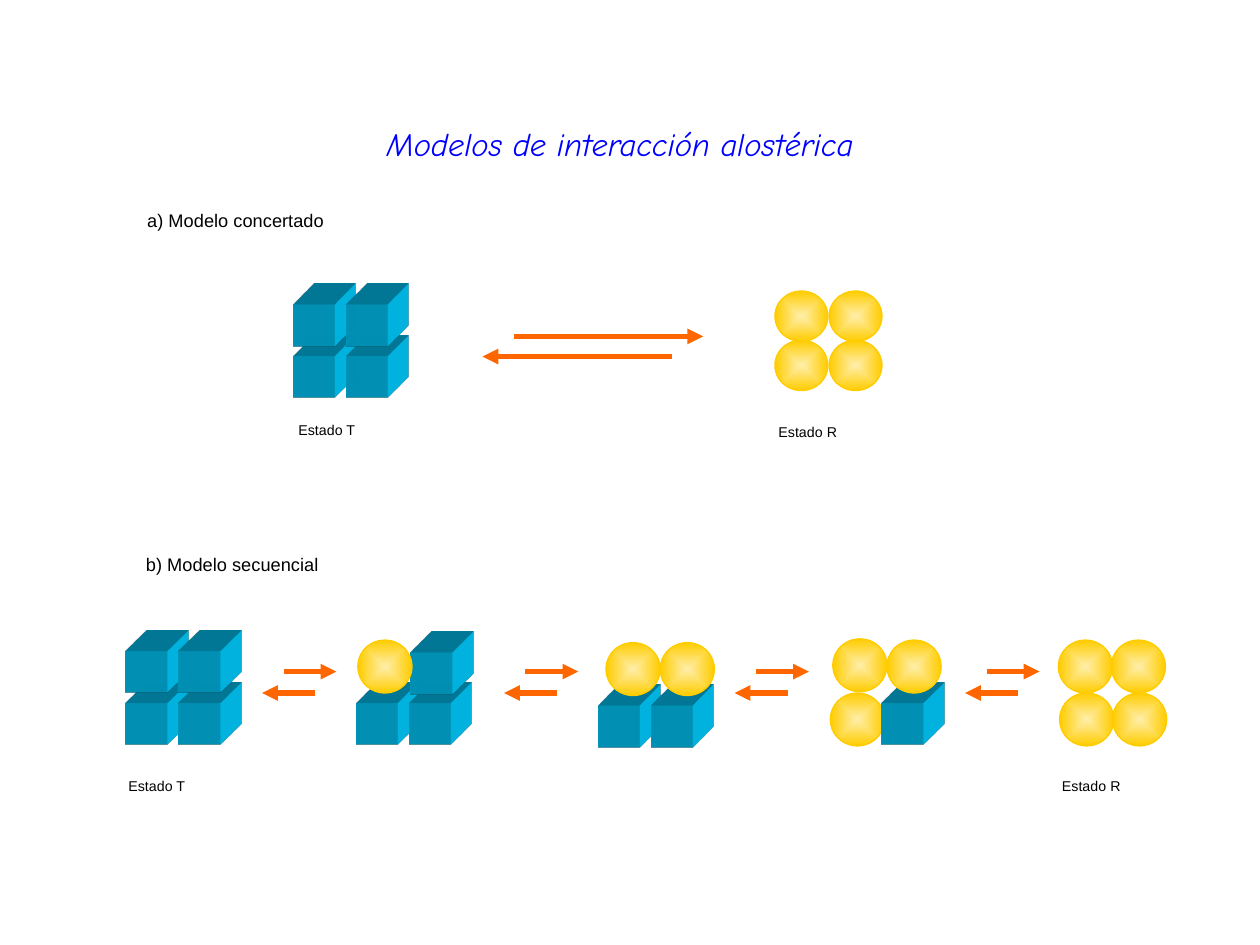
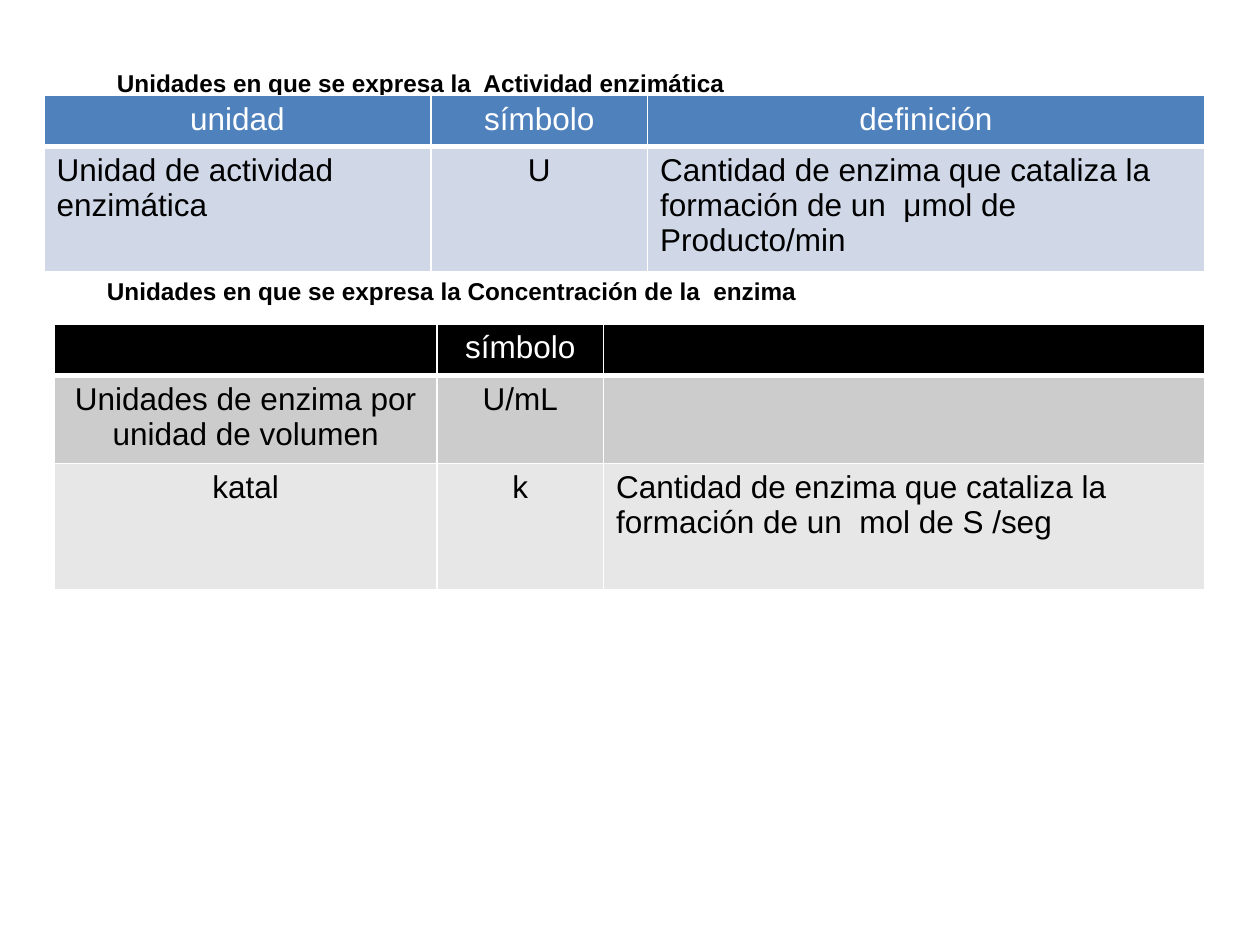
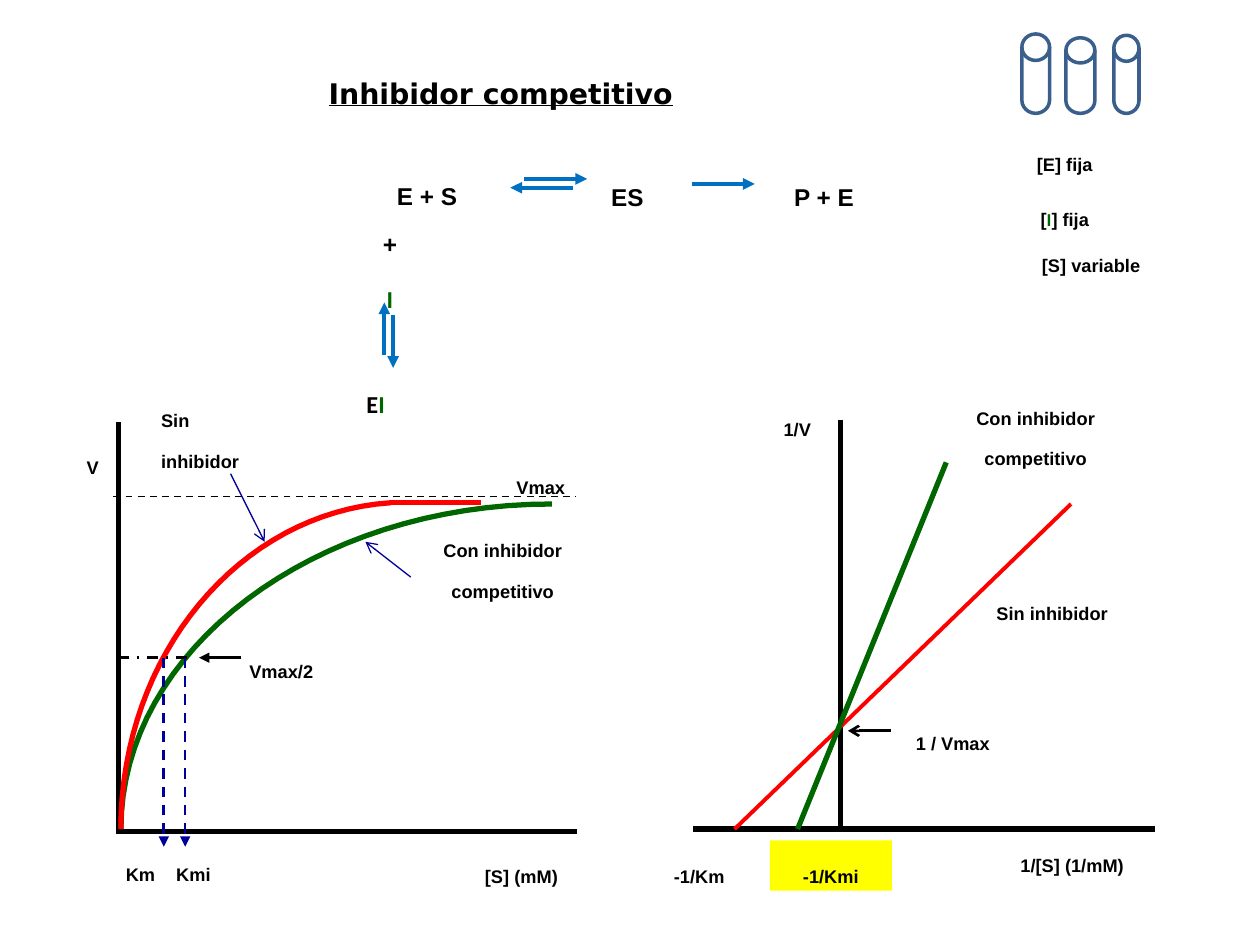
from pptx import Presentation
from pptx.dml.color import RGBColor
from pptx.enum.dml import MSO_LINE
from pptx.enum.shapes import MSO_CONNECTOR, MSO_SHAPE
from pptx.enum.text import MSO_ANCHOR, PP_ALIGN
from pptx.oxml import parse_xml
from pptx.oxml.ns import nsdecls, qn
from pptx.util import Inches, Pt

CENTER, LEFT, TOP = PP_ALIGN.CENTER, PP_ALIGN.LEFT, MSO_ANCHOR.TOP
DASH, DASH_DOT = MSO_LINE.DASH, MSO_LINE.DASH_DOT
STRAIGHT = MSO_CONNECTOR.STRAIGHT
RECT, OVAL = MSO_SHAPE.RECTANGLE, MSO_SHAPE.OVAL
TUBE = MSO_SHAPE.FLOWCHART_MAGNETIC_DISK

COLORS = {
    "black": "000000", "white": "FFFFFF", "title": "0000FF",
    "cube": "00CCFF", "sphere": "FFCC00", "glow": "FFEEA9", "exchange": "FF6600",
    "header": "4F81BD", "band": "D0D8E8", "gray": "CCCCCC", "light gray": "E7E7E7",
    "reaction": "0070C0", "inhibited": "006600", "free": "FF0000",
    "guide": "000099", "highlight": "FFFF00", "tube": "3A5F8C",
}
LOWERED = -18000  # baseline shift shared by all text outside tables


def rgb(name):
    return RGBColor.from_string(COLORS[name])


def write(frame, text, align=LEFT, **style):
    """Fill a frame; text is a string or a list of paragraphs, each a string or runs."""
    frame.word_wrap = True
    for index, content in enumerate([text] if isinstance(text, str) else text):
        paragraph = frame.paragraphs[0] if index == 0 else frame.add_paragraph()
        paragraph.alignment = align
        for words, changes in [(content, {})] if isinstance(content, str) else content:
            look = {"size": 18, "font": "Arial", "color": "black", "bold": False,
                    "italic": False, "underline": False, "baseline": LOWERED,
                    **style, **changes}
            run = paragraph.add_run()
            run.text = words
            font = run.font
            font.size, font.name = Pt(look["size"]), look["font"]
            font.bold, font.italic = look["bold"], look["italic"]
            font.underline = look["underline"]
            font.color.rgb = rgb(look["color"])
            if look["baseline"]:
                run._r.get_or_add_rPr().set("baseline", str(look["baseline"]))


class Deck:
    def __init__(self):
        self.presentation = Presentation()
        self.presentation.slide_width = Inches(10)
        self.presentation.slide_height = Inches(7.5)
        self.slide = None

    def new_slide(self):
        self.slide = self.presentation.slides.add_slide(self.presentation.slide_layouts[6])

    def text(self, x, y, width, height, text, **style):
        box = self.slide.shapes.add_textbox(*map(Inches, (x, y, width, height)))
        write(box.text_frame, text, **style)

    def shape(self, kind, x, y, width, height, fill, line=None, weight=0.75):
        shape = self.slide.shapes.add_shape(kind, *map(Inches, (x, y, width, height)))
        shape.shadow.inherit = False
        shape.fill.solid()
        shape.fill.fore_color.rgb = rgb(fill)
        if line:
            shape.line.color.rgb = rgb(line)
            shape.line.width = Pt(weight)
        else:
            shape.line.fill.background()
        return shape

    def cube(self, x, y):
        properties = self.shape(RECT, x, y, 0.33, 0.33, "cube")._element.spPr
        properties.append(parse_xml(
            f'<a:scene3d {nsdecls("a")}><a:camera prst="legacyObliqueTopRight"/>'
            '<a:lightRig rig="legacyFlat3" dir="b"/></a:scene3d>'))
        properties.append(parse_xml(
            f'<a:sp3d {nsdecls("a")} extrusionH="430200" prstMaterial="legacyMatte">'
            '<a:bevelT w="13500" h="13500" prst="angle"/>'
            '<a:bevelB w="13500" h="13500" prst="angle"/>'
            f'<a:extrusionClr><a:srgbClr val="{COLORS["cube"]}"/></a:extrusionClr></a:sp3d>'))

    def sphere(self, x, y, width=0.43, height=0.42):
        ball = self.shape(OVAL, x, y, width, height, "sphere", "sphere")
        ball.fill.gradient()
        for stop, color in zip(ball.fill.gradient_stops, ("glow", "sphere")):
            stop.color.rgb = rgb(color)
        gradient = ball._element.spPr.find(qn("a:gradFill"))
        gradient.remove(gradient.find(qn("a:lin")))
        gradient.append(parse_xml(
            f'<a:path {nsdecls("a")} path="shape">'
            '<a:fillToRect l="50000" t="50000" r="50000" b="50000"/></a:path>'))

    def line(self, start, end, color="black", weight=3, dash=None, tip=None):
        line = self.slide.shapes.add_connector(STRAIGHT, *map(Inches, (*start, *end)))
        line.line.color.rgb = rgb(color)
        line.line.width = Pt(weight)
        if dash:
            line.line.dash_style = dash
        if tip:
            line.line._get_or_add_ln().append(
                parse_xml(f'<a:tailEnd {nsdecls("a")} type="{tip}"/>'))
        line._element.spPr.append(parse_xml(f'<a:effectLst {nsdecls("a")}/>'))

    def equilibrium(self, start, end, shift, color, weight):
        """Arrow from start to end, and its shifted reverse."""
        back_start, back_end = [(x + shift[0], y + shift[1]) for x, y in (end, start)]
        self.line(start, end, color, weight, tip="triangle")
        self.line(back_start, back_end, color, weight, tip="triangle")

    def curve(self, points, color, steps=32):
        """Cubic curve through four control points."""
        def at(t):
            weights = ((1 - t) ** 3, 3 * t * (1 - t) ** 2, 3 * t * t * (1 - t), t ** 3)
            return tuple(Inches(sum(w * p[axis] for w, p in zip(weights, points)))
                         for axis in (0, 1))
        builder = self.slide.shapes.build_freeform(*at(0))
        builder.add_line_segments([at(i / steps) for i in range(1, steps + 1)], close=False)
        curve = builder.convert_to_shape()
        curve.shadow.inherit = False
        curve.fill.background()
        curve.line.color.rgb = rgb(color)
        curve.line.width = Pt(3)

    def table(self, x, y, columns, heights, rows, fills, aligns):
        frame = self.slide.shapes.add_table(
            len(rows), len(columns),
            *map(Inches, (x, y, sum(columns), sum(heights))))
        table = frame.table
        table.first_row = table.horz_banding = False
        for column, width in zip(table.columns, columns):
            column.width = Inches(width)
        for r, (row, values) in enumerate(zip(table.rows, rows)):
            row.height = Inches(heights[r])
            for cell, value, align in zip(row.cells, values, aligns):
                properties = cell._tc.get_or_add_tcPr()
                for side in "LRTB":
                    weight = Pt(3 if r == 0 and side == "B" else 1)
                    properties.append(parse_xml(
                        f'<a:ln{side} {nsdecls("a")} w="{weight}"><a:solidFill>'
                        f'<a:srgbClr val="{COLORS["white"]}"/></a:solidFill></a:ln{side}>'))
                cell.fill.solid()
                cell.fill.fore_color.rgb = rgb(fills[r])
                if value:
                    write(cell.text_frame, value, align=align if r else CENTER,
                          color="black" if r else "white", baseline=0)


def allosteric_models(deck):
    deck.new_slide()
    deck.text(1.34, 0.67, 7.16, 0.63, "Modelos de interacción alostérica", align=CENTER,
              size=32, font="Comic Neue", color="title", italic=True)

    def t_state(x, y):
        for top in (y, y - 0.41):
            for left in (x, x + 0.42):
                deck.cube(left, top)

    # Concerted model
    deck.text(1.07, 1.46, 2.62, 0.4, "a) Modelo concertado")
    t_state(2.33, 2.83)
    for top in (2.7, 2.31):
        for left in (6.58, 6.15):
            deck.sphere(left, top, 0.42, 0.4)
    deck.equilibrium((4.08, 2.67), (5.58, 2.67), (-0.25, 0.16), "exchange", 3)

    # Sequential model, one subunit at a time
    deck.text(1.06, 4.19, 2.56, 0.4, "b) Modelo secuencial")
    t_state(1, 5.58)
    cube, sphere = deck.cube, deck.sphere
    for draw, x, y in (
        (cube, 2.83, 5.58), (cube, 3.25, 5.58), (cube, 3.26, 5.18), (sphere, 2.84, 5.08),
        (cube, 4.75, 5.6), (cube, 5.17, 5.6), (sphere, 4.81, 5.1), (sphere, 5.24, 5.1),
        (sphere, 6.59, 5.5), (sphere, 6.61, 5.07), (cube, 7, 5.58), (sphere, 7.04, 5.08),
        (sphere, 8.41, 5.5), (sphere, 8.83, 5.5), (sphere, 8.4, 5.08), (sphere, 8.82, 5.08),
    ):
        draw(x, y)
    for x in (2.25, 4.17, 6, 7.83):
        deck.equilibrium((x, 5.33), (x + 0.42, 5.33), (-0.17, 0.17), "exchange", 3)

    # State names
    for x, y, state in ((2.27, 3.18, "T"), (6.08, 3.19, "R"), (0.92, 6, "T"), (8.33, 6, "R")):
        deck.text(x, y, 1, 0.33, f"Estado {state}", size=14)


def enzyme_units(deck):
    deck.new_slide()
    # Activity
    deck.text(0.83, 0.29, 7.63, 0.5, "Unidades en que se expresa la  Actividad enzimática",
              size=24, bold=True)
    deck.table(0.35, 0.76, (3.07, 1.72, 4.42), (0.4, 0.99), (
        ("unidad", "símbolo", "definición"),
        ("Unidad de actividad enzimática", "U",
         "Cantidad de enzima que cataliza la formación de un  μmol de Producto/min"),
    ), ("header", "band"), (LEFT, CENTER, LEFT))

    # Concentration
    deck.text(0.75, 1.94, 8.54, 0.5, "Unidades en que se expresa la Concentración de la  enzima",
              size=24, bold=True)
    deck.table(0.43, 2.57, (3.04, 1.32, 4.77), (0.41, 0.7, 1), (
        ("", "símbolo", ""),
        ("Unidades de enzima por unidad de volumen", "U/mL", ""),
        ("katal", "k", "Cantidad de enzima que cataliza la formación de un  mol de S /seg"),
    ), ("black", "gray", "light gray"), (CENTER, CENTER, LEFT))


def competitive_inhibitor(deck):
    deck.new_slide()
    deck.text(2.51, 0.32, 5, 0.57, "Inhibidor competitivo",
              size=28, font="DejaVu Sans", bold=True, underline=True)
    inhibitor = ("I", {"font": "Calibri", "color": "inhibited"})

    # Axes and Vmax
    for start, end in (((6.67, 3.33), (6.67, 6.58)), ((5.5, 6.58), (9.17, 6.58)),
                       ((0.94, 3.35), (0.94, 6.6)), ((0.92, 6.6), (4.58, 6.6))):
        deck.line(start, end)
    deck.line((0.9, 3.94), (4.57, 3.94), weight=1, dash=DASH)

    # Double reciprocal plot
    deck.line((5.83, 6.58), (8.5, 4), "free", 2.25)
    deck.line((7.51, 3.67), (6.33, 6.58), "inhibited")
    deck.line((7.07, 5.8), (6.73, 5.8), weight=1.5, tip="arrow")

    # Saturation curves
    deck.curve(((4.38, 4), (2.49, 4), (0.96, 5.16), (0.96, 6.58)), "inhibited")
    deck.curve(((3.1, 3.99), (1.9, 4.07), (0.96, 5.2), (0.96, 6.58)), "free")
    deck.line((3.09, 3.99), (3.82, 3.99), "free")
    deck.line((1.91, 5.22), (1.58, 5.22), weight=1.5, tip="triangle")
    deck.line((0.94, 5.22), (1.53, 5.22), weight=1.5, dash=DASH_DOT)
    for x in (1.47, 1.3):
        deck.line((x, 5.22), (x, 6.72), "guide", 1.5, DASH, "triangle")
    deck.line((1.83, 3.76), (2.1, 4.3), "guide", 0.75, tip="arrow")
    deck.line((3.26, 4.58), (2.9, 4.3), "guide", 0.75, tip="arrow")

    # Plot labels
    deck.shape(RECT, 6.11, 6.67, 0.97, 0.4, "highlight").text_frame.vertical_anchor = TOP
    highlighted = deck.slide.shapes[-1].text_frame
    write(highlighted, "-1/Kmi", align=CENTER, bold=True)
    for x, y, width, label in (
        (1.3, 6.65, 0.68, "Kmi"), (0.9, 6.65, 0.61, "Km"), (3.75, 6.67, 1.21, "[S] (mM)"),
        (7.81, 4.58, 1.74, "Sin inhibidor"), (8, 6.58, 1.62, "1/[S] (1/mM)"),
        (5.25, 6.67, 0.9, "-1/Km"), (7.17, 5.61, 1.23, "1 / Vmax"),
        (6.12, 3.12, 0.58, "1/V"), (0.59, 3.42, 0.37, "V"),
        (4, 3.58, 0.88, "Vmax"), (1.88, 5.04, 1.09, "Vmax/2"),
    ):
        deck.text(x, y, width, 0.4, label, bold=True)
    deck.text(1.18, 3.05, 1.28, 0.71, ["Sin", "inhibidor"], bold=True)
    for x, y in ((3.07, 4.08), (7.3, 3.03)):
        deck.text(x, y, 1.84, 0.71, ["Con inhibidor", "competitivo"], align=CENTER, bold=True)

    # Reaction scheme
    for x, y, width, height, species in (
        (2.97, 1.19, 0.84, 0.5, "E + S"), (4.72, 1.2, 0.52, 0.5, "ES"),
        (6.11, 1.2, 0.86, 0.5, "P + E"), (2.91, 1.57, 0.37, 0.91, ["+", [inhibitor]]),
    ):
        deck.text(x, y, width, height, species, align=CENTER, size=24, bold=True)
    deck.text(2.81, 2.84, 0.55, 0.5, [[("E", {"font": "Calibri"}), inhibitor]],
              size=24, bold=True)
    deck.line((5.49, 1.46), (5.99, 1.46), "reaction", 2.25, tip="triangle")
    deck.equilibrium((4.16, 1.42), (4.66, 1.42), (-0.11, 0.07), "reaction", 2.25)
    deck.equilibrium((3.12, 2.5), (3.12, 2.92), (-0.07, -0.1), "reaction", 2.25)

    # Test tubes and conditions
    for x, y, width in ((8.11, 0.27, 0.22), (8.46, 0.3, 0.23), (8.84, 0.28, 0.2)):
        deck.shape(TUBE, x, y, width, 0.9 - y, "white", "tube", 2)
    for x, y, condition in ((8.13, 1.02, "[E] fija"),
                            (8.16, 1.45, [[("[", {}), inhibitor, ("] fija", {})]]),
                            (8.17, 1.82, "[S] variable")):
        deck.text(x, y, 1.39, 0.4, condition, bold=True)


def main():
    deck = Deck()
    allosteric_models(deck)
    enzyme_units(deck)
    competitive_inhibitor(deck)
    deck.presentation.save("out.pptx")


if __name__ == "__main__":
    main()
